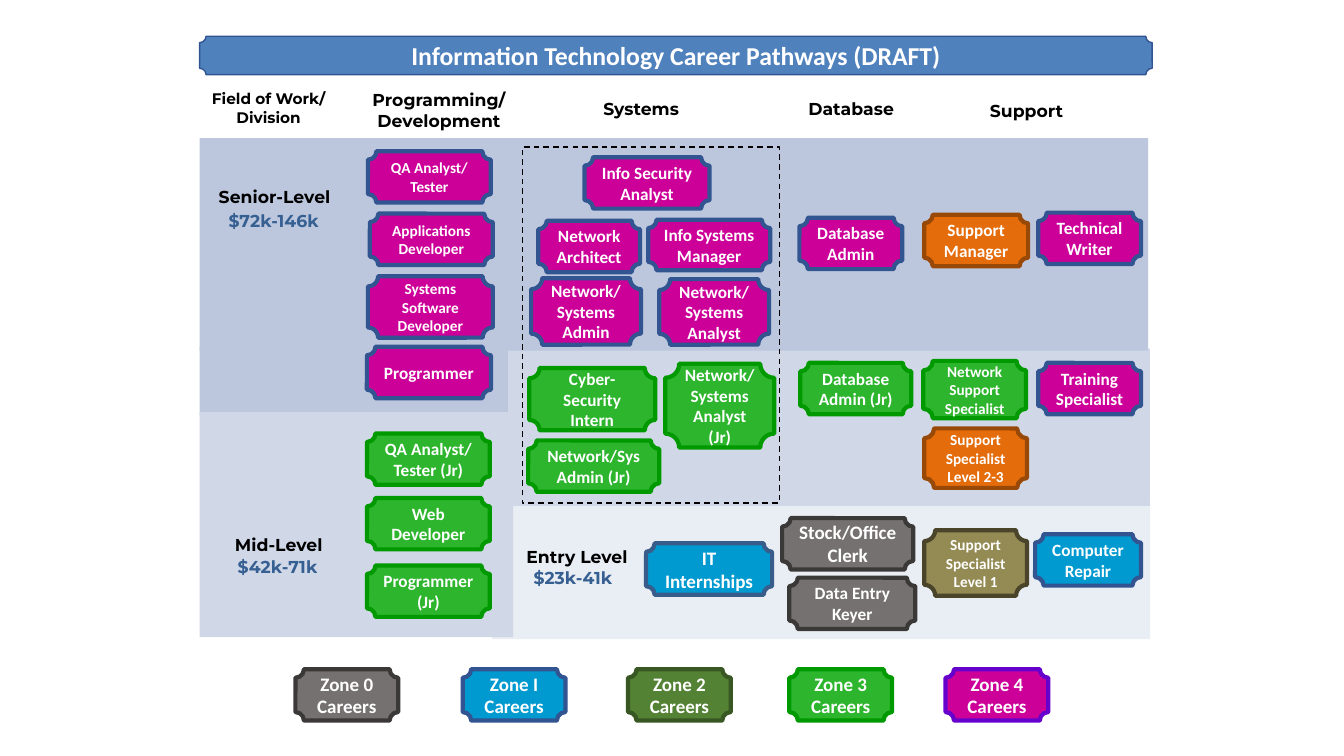
import pptx
import pptx.dml.color
import pptx.enum.dml
import pptx.enum.shapes
import pptx.enum.text
import pptx.util

# Content: all lengths in points
TITLE = "Information Technology Career Pathways (DRAFT)"

# (colour, left, top, width, height)
BANDS = [
    ("senior", 142.6, 247.7, 396, 49),
    ("entry", 351.4, 359.3, 470.2, 97.2),
    ("mid", 142.6, 294.5, 223.9, 160.6),
    ("mid", 362.9, 249.1, 458.6, 112.3),
    ("senior", 142.6, 98.6, 677.5, 151.9),
]

# (text, colour, size, left, top, width)
LABELS = [
    ("Field of Work/ Division", "black", "small", 142.6, 60.5, 98.6),
    ("Programming/Development", "black", "body", 258.5, 60.5, 110.2),
    ("Systems", "black", "body", 409, 67, 98),
    ("Database", "black", "body", 558.7, 67, 98.6),
    ("Support", "black", "body", 684, 68.4, 98.6),
    ("Senior-Level", "black", "body", 146.9, 129.6, 98.6),
    ("$72k-146k", "salary", "body", 146.2, 146.9, 98.6),
    ("Mid-Level", "black", "body", 149.8, 378, 98.6),
    ("$42k-71k", "salary", "body", 149, 393.8, 98.6),
    ("Entry Level", "black", "body", 362.9, 386.6, 98.6),
    ("$23k-41k", "salary", "body", 360, 401.8, 98.6),
]

# (text, style, size, left, top, width[, height])
CARD_HEIGHT = 36.7
CARD_MARGIN = 6.8
CAREERS = {
    "Programming": [
        ("QA Analyst/ Tester", "zone 4", "small", 262.8, 108, 87.8),
        ("Applications Developer", "zone 4", "small", 264.2, 152.6, 87.8),
        ("Systems Software Developer", "zone 4", "small", 262.8, 197.3, 89.3, 43.9),
        ("Programmer", "zone 4", "body", 262.1, 247.7, 88.6),
        ("QA Analyst/ Tester (Jr)", "zone 3", "body", 262.1, 309.6, 87.8),
        ("Web Developer", "zone 3", "body", 262.1, 355.7, 87.8),
        ("Programmer (Jr)", "zone 3", "body", 262.1, 403.9, 87.8),
    ],
    "Systems": [
        ("Info Security Analyst", "zone 4", "body", 417.6, 112.3, 89.3),
        ("Info Systems Manager", "zone 4", "body", 463, 157, 87.1, 36),
        ("Network Architect", "zone 4", "body", 384.5, 157.7, 72.7),
        ("Network/ Systems Admin", "zone 4", "body", 379.4, 198.7, 78.5, 47.5),
        ("Network/ Systems Analyst", "zone 4", "body", 470.9, 199.4, 78.5, 46.8),
        ("Cyber-Security Intern", "zone 3", "body", 378, 262.8, 90, 44.6),
        ("Network/ Systems Analyst (Jr)", "zone 3", "body", 475.2, 259.9, 77.8, 59.8),
        ("Network/Sys Admin (Jr)", "zone 3", "body", 377.3, 314.6, 93.6),
        ("IT Internships", "internship", "large", 461.5, 388.1, 90),
    ],
    "Database": [
        ("Database Admin", "zone 4", "body", 571, 155.5, 73.4),
        ("Database Admin (Jr)", "zone 3", "body", 571.7, 259.2, 79.2),
        ("Stock/Office Clerk", "zone 0", "large", 558.7, 370.1, 93.6),
        ("Data Entry Keyer", "zone 0", "body", 563.8, 412.6, 90),
    ],
    "Support": [
        ("Support Manager", "support", "body", 660.2, 153.4, 74.2),
        ("Network Support Specialist", "zone 3", "small", 659.5, 257.8, 73.4, 41),
        ("Support Specialist Level 2-3", "support", "small", 660.2, 306, 73.4, 42.5),
        ("Support Specialist Level 1", "support entry", "small", 660.2, 378.7, 73.4, 46.8),
        ("Technical Writer", "zone 4", "body", 741.6, 151.9, 73.4),
        ("Training Specialist", "zone 4", "body", 741.6, 259.2, 73.4),
        ("Computer Repair", "zone 1", "body", 739.4, 381.6, 75.6),
    ],
}

# (text, style, left)
LEGEND_TOP, LEGEND_WIDTH = 478, 73.4
LEGEND = [
    ("Zone 0 Careers", "zone 0", 211),
    ("Zone I Careers", "zone 1", 330.5),
    ("Zone 2 Careers", "zone 2", 448.6),
    ("Zone 3 Careers", "zone 3", 563.8),
    ("Zone 4 Careers", "zone 4 legend", 675.4),
]

THEME = {
    "fonts": {"card": "Calibri", "label": "Montserrat"},
    "sizes": {"small": 10.9, "body": 12.3, "large": 13.6, "title": 18.4},
    "colours": {"black": "000000", "white": "FFFFFF", "salary": "376092",
                "senior": "BCC7DE", "mid": "D0D8E8", "entry": "E9EDF4"},
    "cards": {  # (fill, line)
        "title": ("4F81BD", "325491"),
        "zone 0": ("767171", "3B3838"),
        "zone 1": ("009AD0", "325491"),
        "internship": ("009AD0", "385D8A"),
        "zone 2": ("548235", "385723"),
        "zone 3": ("2DB52D", "009900"),
        "zone 4": ("CC0099", "325491"),
        "zone 4 legend": ("CC0099", "6600CC"),
        "support": ("E46C0A", "984807"),
        "support entry": ("948A54", "4A452A"),
    },
}

SHAPE = pptx.enum.shapes.MSO_SHAPE
Pt = pptx.util.Pt


def colour(value):
    return pptx.dml.color.RGBColor.from_string(value)


def write(shape, text, font, size, text_colour):
    text_frame = shape.text_frame
    text_frame.word_wrap = True
    text_frame.text = text
    paragraph = text_frame.paragraphs[0]
    paragraph.alignment = pptx.enum.text.PP_ALIGN.CENTER
    run_font = paragraph.runs[0].font
    run_font.name = THEME["fonts"][font]
    run_font.size = Pt(THEME["sizes"][size])
    run_font.bold = True
    run_font.color.rgb = colour(THEME["colours"][text_colour])


def add_box(slide, kind, bounds, fill=None, line=None, line_width=1):
    shape = slide.shapes.add_shape(kind, *map(Pt, bounds))
    shape.shadow.inherit = False
    if fill:
        shape.fill.solid()
        shape.fill.fore_color.rgb = colour(fill)
    else:
        shape.fill.background()
    if line:
        shape.line.color.rgb = colour(line)
        shape.line.width = Pt(line_width)
    else:
        shape.line.fill.background()
    return shape


def add_card(slide, text, style, size, left, top, width, height=CARD_HEIGHT, line_width=3):
    fill, line = THEME["cards"][style]
    shape = add_box(slide, SHAPE.PLAQUE, (left, top, width, height), fill, line, line_width)
    text_frame = shape.text_frame
    text_frame.margin_left = text_frame.margin_right = Pt(CARD_MARGIN)
    text_frame.vertical_anchor = pptx.enum.text.MSO_ANCHOR.MIDDLE
    write(shape, text, "card", size, "white")


def main():
    presentation = pptx.Presentation()
    presentation.slide_width, presentation.slide_height = Pt(960), Pt(540)
    slide = presentation.slides.add_slide(presentation.slide_layouts[6])

    # Level bands and title
    for band, *bounds in BANDS:
        add_box(slide, SHAPE.RECTANGLE, bounds, THEME["colours"][band])
    add_card(slide, TITLE, "title", "title", 142.6, 25.9, 680.4, 27.4, line_width=1)

    # Column headings, levels and salaries
    for text, text_colour, size, left, top, width in LABELS:
        height = 36.7 if top < 65 else 22.3
        label = slide.shapes.add_textbox(*map(Pt, (left, top, width, height)))
        write(label, text, "label", size, text_colour)
        label.text_frame.auto_size = pptx.enum.text.MSO_AUTO_SIZE.SHAPE_TO_FIT_TEXT

    # Careers and the systems frame
    for careers in CAREERS.values():
        for career in careers:
            add_card(slide, *career)
    frame = add_box(slide, SHAPE.RECTANGLE, (373, 105.1, 183.6, 254.2),
                    line=THEME["colours"]["black"])
    frame.line.dash_style = pptx.enum.dml.MSO_LINE.DASH

    # Zone legend
    for text, style, left in LEGEND:
        add_card(slide, text, style, "large", left, LEGEND_TOP, LEGEND_WIDTH)

    presentation.save("out.pptx")


if __name__ == "__main__":
    main()
